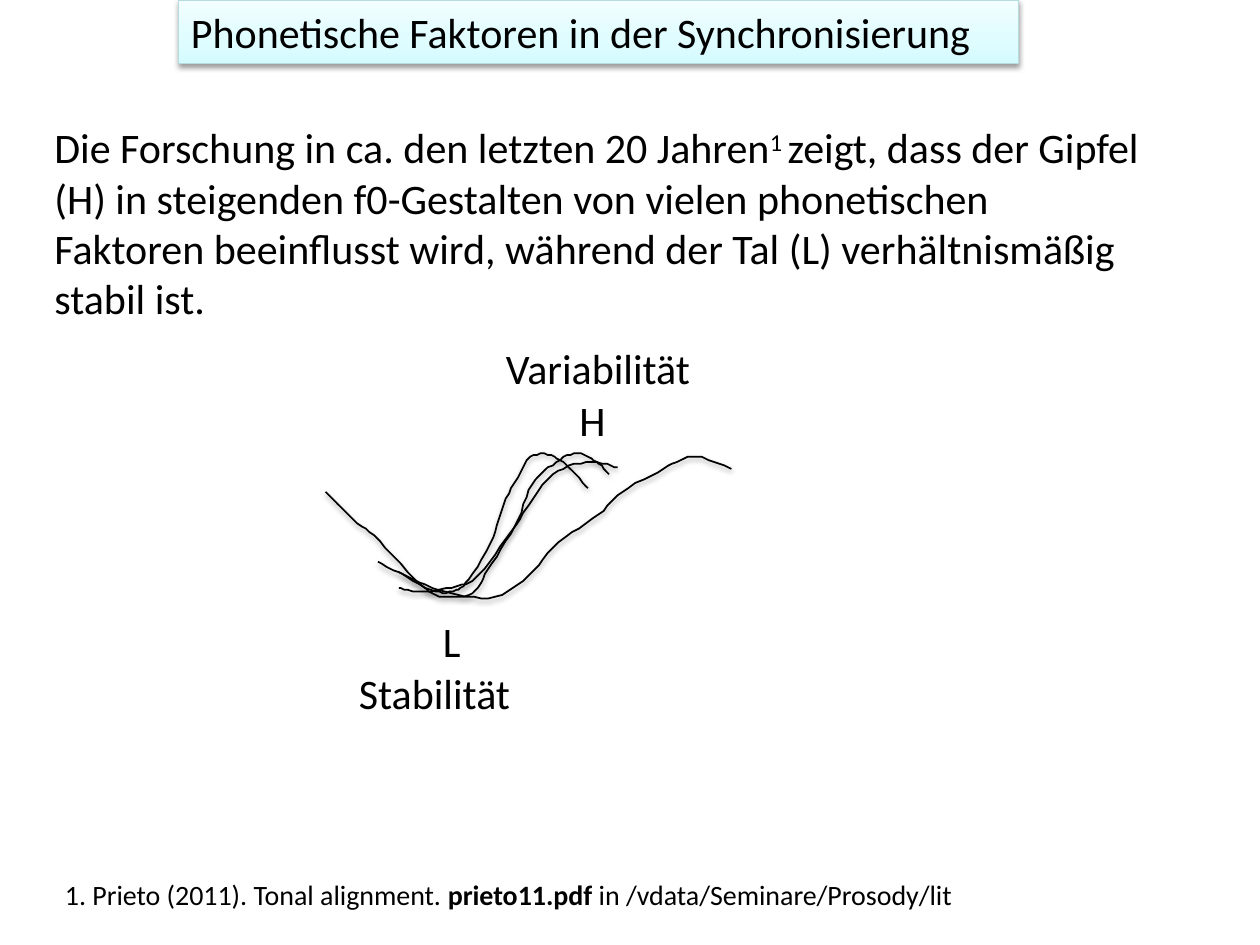
from copy import deepcopy

from lxml import etree
from pptx import Presentation
from pptx.dml import color as dml
from pptx.enum import shapes, text
from pptx.oxml import ns
from pptx.util import Pt

COLORS = {
    "ink": "000000",
    "title_line": "B6DCDF",
    "title_bottom": "D3FBFF",
    "title_middle": "DFFCFF",
    "title_top": "F2FEFF",
}
RGB = {name: dml.RGBColor.from_string(value) for name, value in COLORS.items()}
STEPS = 6


def write(shape, size, *parts):
    """Fill a shape with one left-aligned paragraph; a part is (wording, style)."""
    frame = shape.text_frame
    frame.word_wrap = True
    frame.auto_size = text.MSO_AUTO_SIZE.SHAPE_TO_FIT_TEXT
    paragraph = frame.paragraphs[0]
    paragraph.alignment = text.PP_ALIGN.LEFT
    for wording, style in parts:
        run = paragraph.add_run()
        run.text = wording
        run.font.name = "Calibri"
        run.font.size = Pt(size)
        run.font.color.rgb = RGB["ink"]
        if style == "bold":
            run.font.bold = True
        elif style == "superscript":
            run.font._element.set("baseline", "30000")


def smooth(knots):
    """Return points on a Catmull-Rom curve through the knots."""
    padded = [knots[0], *knots, knots[-1]]
    points = [knots[0]]
    for quad in zip(padded, padded[1:], padded[2:], padded[3:]):
        for step in range(1, STEPS + 1):
            t = step / STEPS
            points.append(tuple(
                b + t / 2 * (c - a + t * (2 * a - 5 * b + 4 * c - d
                                          + t * (3 * (b - c) + d - a)))
                for a, b, c, d in zip(*quad)))
    return points


prs = Presentation()
prs.slide_width, prs.slide_height = Pt(720), Pt(540)
slide = prs.slides.add_slide(prs.slide_layouts[6])

# Title bar
title = slide.shapes.add_shape(
    shapes.MSO_SHAPE.RECTANGLE, Pt(102), Pt(0), Pt(480), Pt(36.5))
title.fill.gradient()
stop_list = title._element.spPr.find(".//" + ns.qn("a:gsLst"))
stop_list.insert(1, deepcopy(stop_list[0]))
title_stops = [("title_bottom", 0), ("title_middle", 0.35), ("title_top", 1)]
for stop, (shade, position) in zip(title.fill.gradient_stops, title_stops):
    stop.color.rgb = RGB[shade]
    stop.position = position
title.fill.gradient_angle = 90
title.line.color.rgb = RGB["title_line"]
title.line.width = Pt(0.75)
write(title, 24, ("Phonetische Faktoren in der Synchronisierung", ""))

# Paragraph and footnote
finding = slide.shapes.add_textbox(Pt(24), Pt(66), Pt(636), Pt(124))
write(finding, 24,
      ("Die Forschung in ca. den letzten 20 Jahren", ""),
      ("1 ", "superscript"),
      ("zeigt, dass der Gipfel (H) in steigenden f0-Gestalten von vielen "
       "phonetischen Faktoren beeinflusst wird, während der Tal (L) "
       "verhältnismäßig stabil ist.", ""))
footnote = slide.shapes.add_textbox(Pt(30), Pt(498), Pt(666), Pt(26.5))
write(footnote, 16,
      ("1. Prieto (2011). Tonal alignment. ", ""),
      ("prieto11.pdf ", "bold"),
      ("in /vdata/Seminare/Prosody/lit", ""))

# Labels of the valley and the peak
labels = [("L", 246, 348, 66), ("H", 324, 222, 42),
          ("Stabilität", 198, 378, 126), ("Variabilität", 282, 192, 126)]
for label, left, top, width in labels:
    box = slide.shapes.add_textbox(Pt(left), Pt(top), Pt(width), Pt(36.5))
    write(box, 24, (label, ""))

# Knots of the f0 contours in points, from onset over valley to peak
contours = [
    [(228, 336), (241, 338), (261, 335), (274, 328), (292, 304),
     (306, 283), (319, 269), (338, 264), (353, 267)],
    [(228, 327), (246, 337), (259, 338), (268, 331), (282, 307),
     (288, 288), (297, 271), (303, 261), (315, 260), (325, 267), (336, 279)],
    [(216, 321), (236, 331), (258, 339), (283, 341), (302, 329),
     (319, 310), (342, 294), (356, 281), (379, 268), (393, 261),
     (403, 262), (418, 268)],
    [(186, 281), (202, 297), (217, 309), (240, 334), (253, 341),
     (270, 339), (279, 325), (294, 301), (304, 277), (318, 264),
     (330, 259), (341, 264), (348, 271)],
]
curves = []
for knots in contours:
    start, *rest = smooth(knots)
    builder = slide.shapes.build_freeform(*start, scale=Pt(1))
    builder.add_line_segments(rest, close=False)
    curve = builder.convert_to_shape()
    curve.fill.background()
    curve.line.color.rgb = RGB["ink"]
    curve.line.width = Pt(1)
    curves.append(curve)

# Soft shadow below the title bar and the contours
for shaded in [title, *curves]:
    shaded.shadow.inherit = False
    effects = shaded._element.spPr.find(ns.qn("a:effectLst"))
    shadow = etree.SubElement(
        effects, ns.qn("a:outerShdw"), blurRad=str(Pt(3.1)),
        dist=str(Pt(1.6)), dir="5400000", rotWithShape="0")
    tint = etree.SubElement(shadow, ns.qn("a:srgbClr"), val=COLORS["ink"])
    etree.SubElement(tint, ns.qn("a:alpha"), val="38000")

prs.save("out.pptx")
